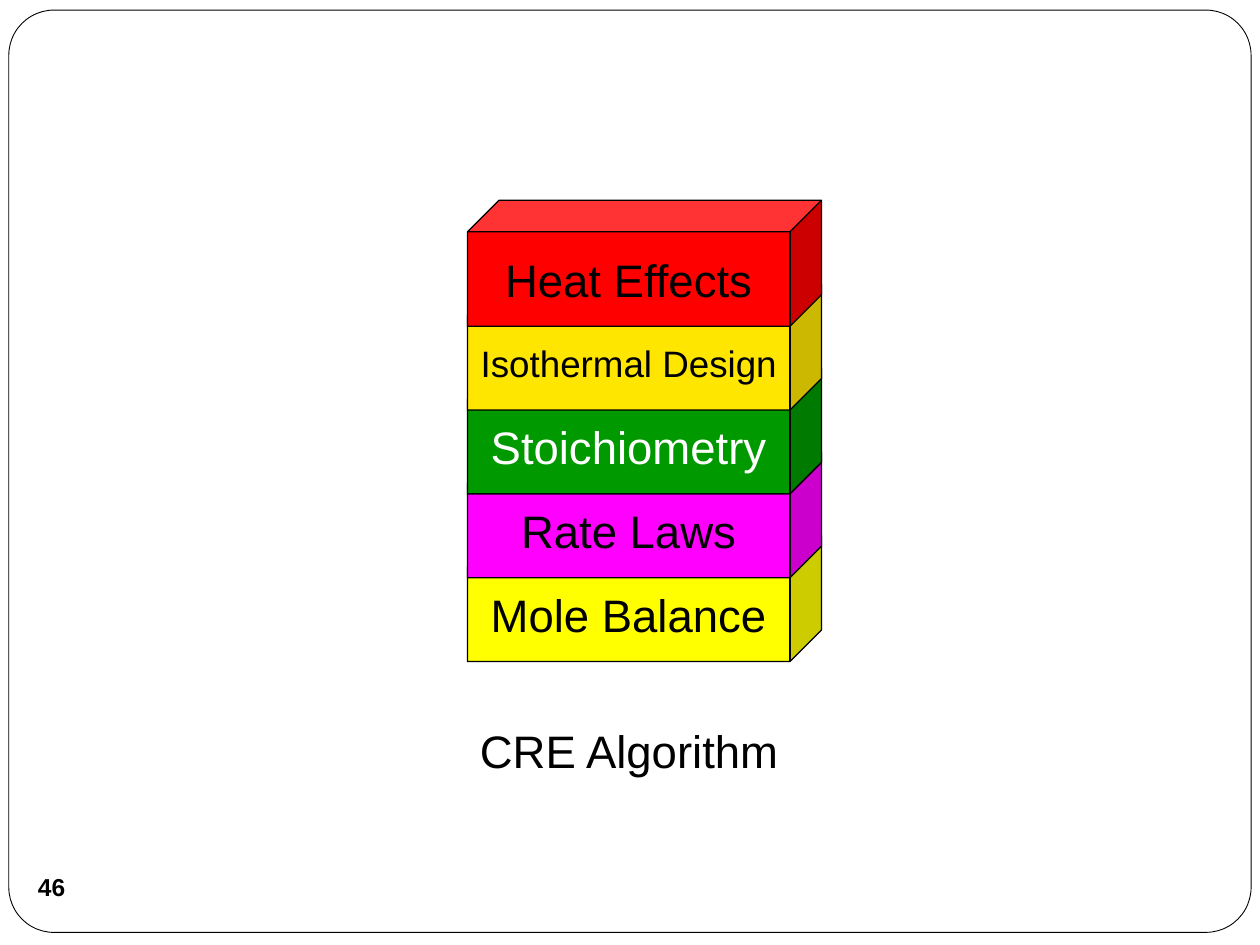
from dataclasses import dataclass

from pptx import Presentation
from pptx.dml.color import RGBColor
from pptx.enum import shapes, text
from pptx.util import Inches, Pt

KIND = shapes.MSO_SHAPE
ALIGN = text.PP_ALIGN


@dataclass(frozen=True)
class Theme:
    font: str = "Arial"
    ink: str = "000000"
    paper: str = "FFFFFF"
    big: int = 26
    mid: int = 21
    small: int = 14
    thin: float = 0.5
    edge: float = 0.75


THEME = Theme()

# Bottom to top: label, fill, text colour, text size
STEPS = [
    ("Mole Balance", "FFFF00", THEME.ink, THEME.big),
    ("Rate Laws", "FF00FF", THEME.ink, THEME.big),
    ("Stoichiometry", "009900", THEME.paper, THEME.big),
    ("Isothermal Design", "FFE600", THEME.ink, THEME.mid),
    ("Heat Effects", "FF0000", THEME.ink, THEME.big),
]


def add_text(shape, words, size, color=THEME.ink, bold=False,
             align=ALIGN.CENTER, wrap=False):
    frame = shape.text_frame
    frame.word_wrap = wrap
    para = frame.paragraphs[0]
    para.alignment = align
    run = para.add_run()
    run.text = words
    run.font.name = THEME.font
    run.font.size = Pt(size)
    run.font.bold = bold
    run.font.color.rgb = RGBColor.from_string(color)
    return frame


def add_form(slide, kind, box, fill=None, line=None):
    form = slide.shapes.add_shape(kind, *map(Inches, box))
    form.shadow.inherit = False
    if fill:
        form.fill.solid()
        form.fill.fore_color.rgb = RGBColor.from_string(fill)
    else:
        form.fill.background()
    if line:
        form.line.color.rgb = RGBColor.from_string(THEME.ink)
        form.line.width = Pt(line)
    else:
        form.line.fill.background()
    form.text_frame.vertical_anchor = text.MSO_ANCHOR.MIDDLE
    return form


def add_frame(slide, box):
    """Rounded border around the page."""
    form = add_form(slide, KIND.ROUNDED_RECTANGLE, box, THEME.paper, THEME.thin)
    form.adjustments[0] = 0.049


def add_stack(slide, box, tall=1):
    """Cubes piled from the bottom of the box to its top."""
    left, top, width, height = box
    step = (height - tall) / (len(STEPS) - 1)
    for i, (label, fill, color, size) in enumerate(STEPS):
        y = top + height - tall - i * step
        cube = add_form(slide, KIND.CUBE, (left, y, width, tall), fill, THEME.edge)
        cube.adjustments[0] = 0.25
        add_text(cube, label, size, color)


def add_number(slide, box):
    """Page number."""
    form = add_form(slide, KIND.OVAL, box)
    frame = add_text(form, "46", THEME.small, bold=True)
    frame.margin_left = frame.margin_right = 0
    frame.margin_top = frame.margin_bottom = 0


def add_title(slide, box):
    """Caption below the stack."""
    form = slide.shapes.add_textbox(*map(Inches, box))
    frame = add_text(form, "CRE Algorithm", THEME.big, align=ALIGN.LEFT, wrap=True)
    frame.auto_size = text.MSO_AUTO_SIZE.SHAPE_TO_FIT_TEXT


def main():
    deck = Presentation()
    deck.slide_width, deck.slide_height = Inches(10), Inches(7.5)
    slide = deck.slides.add_slide(deck.slide_layouts[6])
    add_frame(slide, (0.07, 0.08, 9.86, 7.32))
    add_stack(slide, (3.71, 1.59, 2.81, 3.66))
    add_number(slide, (0.16, 6.79, 0.5, 0.5))
    add_title(slide, (3.71, 5.69, 3.21, 0.54))
    deck.save("out.pptx")


if __name__ == "__main__":
    main()
